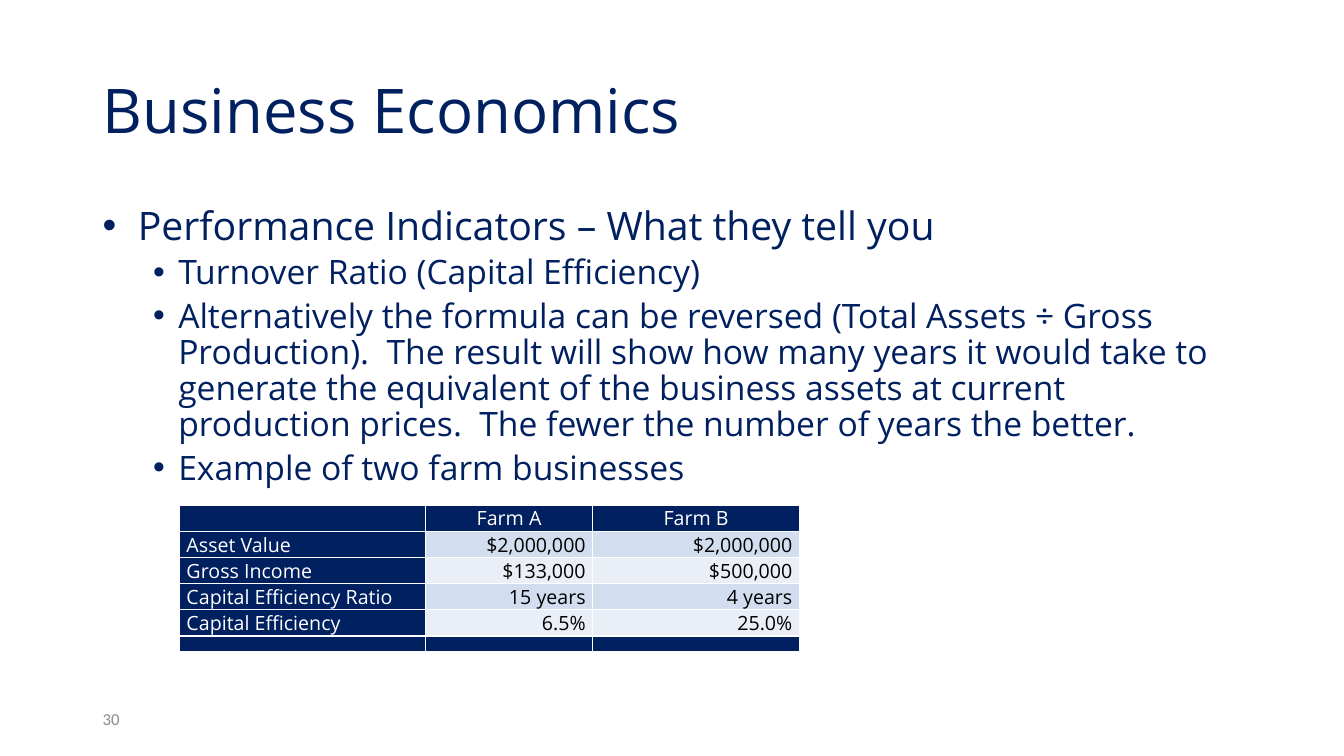
"""Build the Business Economics slide comparing the capital efficiency of two farms."""
from dataclasses import dataclass

from lxml.etree import SubElement
from pptx import Presentation
from pptx.dml.color import RGBColor
from pptx.enum.text import MSO_ANCHOR, PP_ALIGN
from pptx.oxml.ns import qn
from pptx.util import Inches, Pt


@dataclass(frozen=True)
class Theme:
    navy: RGBColor = RGBColor(0x00, 0x20, 0x60)
    white: RGBColor = RGBColor(0xFF, 0xFF, 0xFF)
    black: RGBColor = RGBColor(0x00, 0x00, 0x00)
    grey: RGBColor = RGBColor(0x8C, 0x8C, 0x8C)
    bands: tuple = (RGBColor(0xD2, 0xDE, 0xEF), RGBColor(0xEA, 0xEF, 0xF7))
    main_font: str = "Open Sans"
    number_font: str = "Calibri"
    title_size: int = 44
    table_size: int = 14
    closing_size: int = 8
    number_size: int = 12


@dataclass(frozen=True)
class Bullet:
    text: str
    size: int = 24
    margin: float = 0.75
    hanging: float = 0.25
    space_before: int = 5


THEME = Theme()
BULLETS = (
    Bullet("Performance Indicators – What they tell you", 28, 0.35, 0.35, 0),
    Bullet("Turnover Ratio (Capital Efficiency)"),
    Bullet(
        "Alternatively the formula can be reversed (Total Assets ÷ Gross Production).  "
        "The result will show how many years it would take to generate the equivalent "
        "of the business assets at current production prices.  "
        "The fewer the number of years the better."
    ),
    Bullet("Example of two farm businesses"),
)
FARM_ROWS = (
    ("", "Farm A", "Farm B"),
    ("Asset Value", "$2,000,000", "$2,000,000"),
    ("Gross Income", "$133,000", "$500,000"),
    ("Capital Efficiency Ratio", "15 years", "4 years"),
    ("Capital Efficiency", "6.5%", "25.0%"),
    ("", "", ""),
)
COLUMN_WIDTHS = (2.44, 1.66, 2.05)
ROW_HEIGHT, CLOSING_HEIGHT = 0.26, 0.16


def style(paragraph, size: int, color: RGBColor, name: str = THEME.main_font) -> None:
    """Set the font of a whole paragraph."""
    font = paragraph.font
    font.size, font.name, font.bold = Pt(size), name, False
    font.color.rgb = color


def add_title(page, text: str) -> None:
    """Move and format the title placeholder."""
    title = page.shapes.title
    title.left, title.top = Inches(0.92), Inches(0.4)
    title.width, title.height = Inches(11.5), Inches(1.45)
    title.text_frame.text = text
    title.text_frame.vertical_anchor = MSO_ANCHOR.MIDDLE
    paragraph = title.text_frame.paragraphs[0]
    paragraph.alignment, paragraph.line_spacing = PP_ALIGN.LEFT, 0.9
    style(paragraph, THEME.title_size, THEME.navy)


def add_bullets(page, bullets: tuple[Bullet, ...]) -> None:
    """Write the bulleted body text."""
    box = page.shapes.add_textbox(Inches(0.92), Inches(2), Inches(11.5), Inches(4.76))
    frame = box.text_frame
    frame.word_wrap = True
    for index, bullet in enumerate(bullets):
        paragraph = frame.add_paragraph() if index else frame.paragraphs[0]
        paragraph.text = bullet.text
        paragraph.line_spacing = 0.9
        paragraph.space_before = Pt(bullet.space_before)
        properties = paragraph._p.get_or_add_pPr()
        properties.set("marL", str(Inches(bullet.margin)))
        properties.set("indent", str(-Inches(bullet.hanging)))
        SubElement(properties, qn("a:buFont"), typeface="Arial")
        SubElement(properties, qn("a:buChar"), char="•")
        style(paragraph, bullet.size, THEME.navy)


def fill_cell(cell, text: str, row: int, column: int) -> None:
    """Write and colour one table cell according to its place."""
    closing = row == len(FARM_ROWS) - 1
    dark = row == 0 or column == 0 or closing
    cell.margin_left = cell.margin_right = Inches(0.07)
    cell.margin_top = cell.margin_bottom = 0
    cell.fill.solid()
    cell.fill.fore_color.rgb = THEME.navy if dark else THEME.bands[(row - 1) % 2]
    cell.vertical_anchor = MSO_ANCHOR.MIDDLE if column else MSO_ANCHOR.TOP
    size = THEME.closing_size if closing else THEME.table_size
    paragraph = cell.text_frame.paragraphs[0]
    if not text:
        SubElement(paragraph._p, qn("a:endParaRPr"), sz=str(size * 100))
        return
    paragraph.text = text
    if column == 0:
        paragraph.alignment = PP_ALIGN.JUSTIFY
    else:
        paragraph.alignment = PP_ALIGN.RIGHT if row else PP_ALIGN.CENTER
    style(paragraph, size, THEME.white if dark else THEME.black)


def add_farm_table(page) -> None:
    """Draw the table of the two farms."""
    heights = [ROW_HEIGHT] * (len(FARM_ROWS) - 1) + [CLOSING_HEIGHT]
    table = page.shapes.add_table(
        len(FARM_ROWS), len(COLUMN_WIDTHS), Inches(1.78), Inches(5.01),
        Inches(sum(COLUMN_WIDTHS)), Inches(sum(heights)),
    ).table
    table.first_row = table.horz_banding = False
    for column, width in zip(table.columns, COLUMN_WIDTHS):
        column.width = Inches(width)
    for row, height in zip(table.rows, heights):
        row.height = Inches(height)
    for row, values in enumerate(FARM_ROWS):
        for column, text in enumerate(values):
            fill_cell(table.cell(row, column), text, row, column)


def add_page_number(page, number: str) -> None:
    """Write the page number at the bottom left."""
    box = page.shapes.add_textbox(Inches(0.92), Inches(6.93), Inches(3), Inches(0.4))
    frame = box.text_frame
    frame.word_wrap = True
    frame.vertical_anchor = MSO_ANCHOR.MIDDLE
    frame.text = number
    style(frame.paragraphs[0], THEME.number_size, THEME.grey, THEME.number_font)


def main() -> None:
    """Build and save the deck."""
    deck = Presentation()
    deck.slide_width, deck.slide_height = Inches(13.33), Inches(7.5)
    page = deck.slides.add_slide(deck.slide_layouts.get_by_name("Title Only"))
    add_title(page, "Business Economics")
    add_bullets(page, BULLETS)
    add_page_number(page, "30")
    add_farm_table(page)
    deck.save("out.pptx")


if __name__ == "__main__":
    main()
